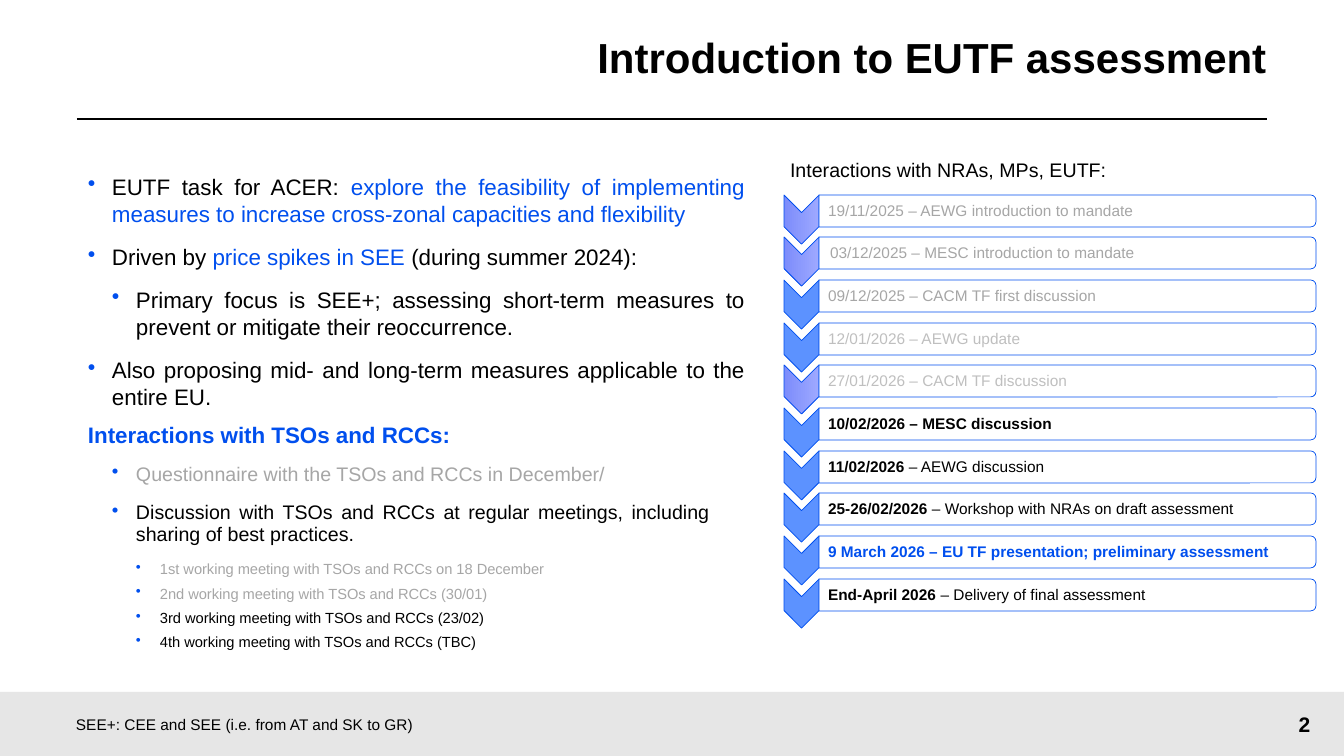
"""Build the slide that introduces the EUTF assessment."""
import dataclasses

import lxml.etree
import pptx
import pptx.dml.color
import pptx.enum.shapes
import pptx.enum.text
import pptx.oxml.ns
import pptx.util

SCALE = 12192000 / 1344
STEP = 24
FORM = pptx.enum.shapes.MSO_SHAPE
ALIGN = pptx.enum.text.PP_ALIGN
ANCHOR = pptx.enum.text.MSO_ANCHOR


@dataclasses.dataclass(frozen=True)
class Theme:
    """Colours, font and type sizes of the slide."""
    font: str = "Arial"
    black: str = "000000"
    white: str = "FFFFFF"
    blue: str = "004FEE"
    sky: str = "5C92FF"
    light: str = "9EA9FF"
    deep: str = "7C8CFB"
    band: str = "E6E6E6"
    grey: str = "A6A6A6"
    pale: str = "BFBFBF"
    title: float = 30
    large: float = 16
    page: float = 15
    mid: float = 14
    note: float = 11
    small: float = 10.5


T = Theme()

TASKS = [
    (1, T.large, 0, 6, [("EUTF task for ACER: ", T.black, False),
                        ("explore the feasibility of implementing measures to increase "
                         "cross-zonal capacities and flexibility", T.blue, False)]),
    (1, T.large, 6, 6, [("Driven by ", T.black, False), ("price spikes in SEE ", T.blue, False),
                        ("(during summer 2024):", T.black, False)]),
    (2, T.large, 5, 6, [("Primary focus is SEE+; assessing short-term measures to prevent "
                         "or mitigate their reoccurrence.", T.black, False)]),
    (1, T.large, 6, 6, [("Also proposing mid- and long-term measures applicable to the "
                         "entire EU.", T.black, False)]),
]

TALKS = [
    (0, T.large, 0, 6, [("Interactions with TSOs and RCCs:", T.blue, True)]),
    (2, T.mid, 6, 6, [("Questionnaire with the TSOs and RCCs in December/", T.grey, False)]),
    (2, T.mid, 6, 6, [("Discussion with TSOs and RCCs at regular meetings, including "
                       "sharing of best practices.", T.black, False)]),
    (3, T.small, 6, 0, [("1st working meeting with TSOs and RCCs on 18 December", T.grey, False)]),
    (3, T.small, 6, 0, [("2nd working meeting with TSOs and RCCs (30/01)", T.grey, False)]),
    (3, T.small, 6, 0, [("3rd working meeting with TSOs and RCCs (23/02)", T.black, False)]),
    (3, T.small, 6, 0, [("4th working meeting with TSOs and RCCs (TBC)", T.black, False)]),
]

DATES = [
    (True, 9, [("19/11/2025 – AEWG introduction to mandate", T.grey, False)]),
    (True, 11, [("03/12/2025 – MESC introduction to mandate", T.grey, False)]),
    (False, 9, [("09/12/2025 – CACM TF first discussion", T.grey, False)]),
    (False, 9, [("12/01/2026 – AEWG update", T.pale, False)]),
    (True, 9, [("27/01/2026 – CACM TF discussion", T.pale, False)]),
    (False, 9, [("10/02/2026 – MESC discussion", T.black, True)]),
    (False, 9, [("11/02/2026 ", T.black, True), ("– AEWG discussion", T.black, False)]),
    (False, 9, [("25-26/02/2026 ", T.black, True),
                ("– Workshop with NRAs on draft assessment", T.black, False)]),
    (False, 9, [("9 March 2026 – EU TF presentation; preliminary assessment", T.blue, True)]),
    (False, 9, [("End-April 2026 ", T.black, True),
                ("– Delivery of final assessment", T.black, False)]),
]


def px(size):
    """Turn px into EMU."""
    return pptx.util.Emu(round(size * SCALE))


def rgb(code):
    """Return the colour for a hex code."""
    return pptx.dml.color.RGBColor.from_string(code)


def node(parent, tag, **values):
    """Append a drawing element to its parent."""
    return lxml.etree.SubElement(parent, pptx.oxml.ns.qn(tag), **values)


def shape(slide, form, x, y, w, h, fill, turn=0):
    """Draw a filled shape whose box holds after its turn."""
    if turn:
        x, y, w, h = x + (w - h) / 2, y + (h - w) / 2, h, w
    item = slide.shapes.add_shape(form, px(x), px(y), px(w), px(h))
    item.rotation = turn
    item.shadow.inherit = False
    item.fill.solid()
    item.fill.fore_color.rgb = rgb(fill)
    item.line.fill.background()
    return item


def edge(item):
    """Give a shape a thin blue outline."""
    item.line.color.rgb = rgb(T.blue)
    item.line.width = pptx.util.Pt(0.5)


def bullet(para, level):
    """Hang a blue bullet at a list level."""
    props = para._p.get_or_add_pPr()
    props.set("marL", str(px(STEP * level)))
    props.set("indent", str(px(-STEP)))
    node(node(props, "a:buClr"), "a:srgbClr", val=T.blue)
    node(props, "a:buChar", char="•")


def fill_text(para, size, runs):
    """Add the runs of one paragraph."""
    for words, tone, bold in runs:
        run = para.add_run()
        run.text = words
        run.font.name = T.font
        run.font.size = pptx.util.Pt(size)
        run.font.bold = bold
        run.font.color.rgb = rgb(tone)


def frame(slide, x, y, w, h, inset=(10, 5, 10, 5), anchor=ANCHOR.TOP):
    """Add an empty text box that wraps."""
    text = slide.shapes.add_textbox(px(x), px(y), px(w), px(h)).text_frame
    text.word_wrap = True
    text.vertical_anchor = anchor
    text.margin_left, text.margin_top, text.margin_right, text.margin_bottom = map(px, inset)
    return text


def label(text, size, runs, align=ALIGN.LEFT, pitch=1.0):
    """Write a single paragraph into a text frame."""
    para = text.paragraphs[0]
    para.alignment = align
    para.line_spacing = pitch
    fill_text(para, size, runs)


def points(text, items, pitch):
    """Write a justified list into a text frame."""
    for i, (level, size, before, after, runs) in enumerate(items):
        para = text.add_paragraph() if i else text.paragraphs[0]
        if level:
            bullet(para, level)
        para.alignment = ALIGN.JUSTIFY
        para.line_spacing = pitch
        para.space_before = pptx.util.Pt(before)
        para.space_after = pptx.util.Pt(after)
        fill_text(para, size, runs)


def rule(slide, x, y, end):
    """Draw the level line below the title."""
    line = slide.shapes.add_connector(
        pptx.enum.shapes.MSO_CONNECTOR.STRAIGHT, px(x), px(y), px(end), px(y))
    line.line.color.rgb = rgb(T.black)
    line.line.width = pptx.util.Pt(1.5)
    node(line._element.spPr, "a:effectLst")


def event(slide, y, faded, inset, runs):
    """Draw one dated row with its arrow."""
    arrow = shape(slide, FORM.CHEVRON, 784, y, 35, 49, T.sky, 90)
    if faded:
        arrow.fill.gradient()
        arrow.fill.gradient_angle = 270
        for stop, tone in zip(arrow.fill.gradient_stops, (T.light, T.deep)):
            stop.color.rgb = rgb(tone)
    edge(arrow)
    bar = shape(slide, FORM.ROUND_2_SAME_RECTANGLE, 819, y, 497, 32, T.white, 90)
    tone = bar._element.spPr.find(".//" + pptx.oxml.ns.qn("a:srgbClr"))
    node(tone, "a:alpha", val="90000")
    edge(bar)
    text = frame(slide, 819, y + 2, 495, 29, (inset, 1, 1, 1), ANCHOR.MIDDLE)
    label(text, T.note, runs, pitch=0.9)


def main():
    """Build the slide and save it."""
    deck = pptx.Presentation()
    deck.slide_width, deck.slide_height = px(1344), px(756)
    slide = deck.slides.add_slide(deck.slide_layouts[6])

    shape(slide, FORM.RECTANGLE, 0, 692, 1344, 64, T.band)
    rule(slide, 77, 119, 1267)
    label(frame(slide, 275, 0, 992, 119, (0, 20, 0, 20), ANCHOR.MIDDLE), T.title,
          [("Introduction to EUTF assessment", T.black, True)], ALIGN.RIGHT, 0.9)
    label(frame(slide, 1265, 692, 79, 64, anchor=ANCHOR.MIDDLE), T.page,
          [("2", T.black, True)], ALIGN.CENTER)

    points(frame(slide, 78, 168, 677, 475), TASKS, 1.0)
    points(frame(slide, 78, 419, 642, 257), TALKS, 0.9)

    label(frame(slide, 780, 153, 538, 34), T.mid,
          [("Interactions with NRAs, MPs, EUTF:", T.black, False)])
    for i, (faded, inset, runs) in enumerate(DATES):
        event(slide, 195 + i * 128 // 3, faded, inset, runs)

    label(frame(slide, 66, 710, 677, 29), T.note,
          [("SEE+: CEE and SEE (i.e. from AT and SK to GR)", T.black, False)])
    deck.save("out.pptx")


if __name__ == "__main__":
    main()
